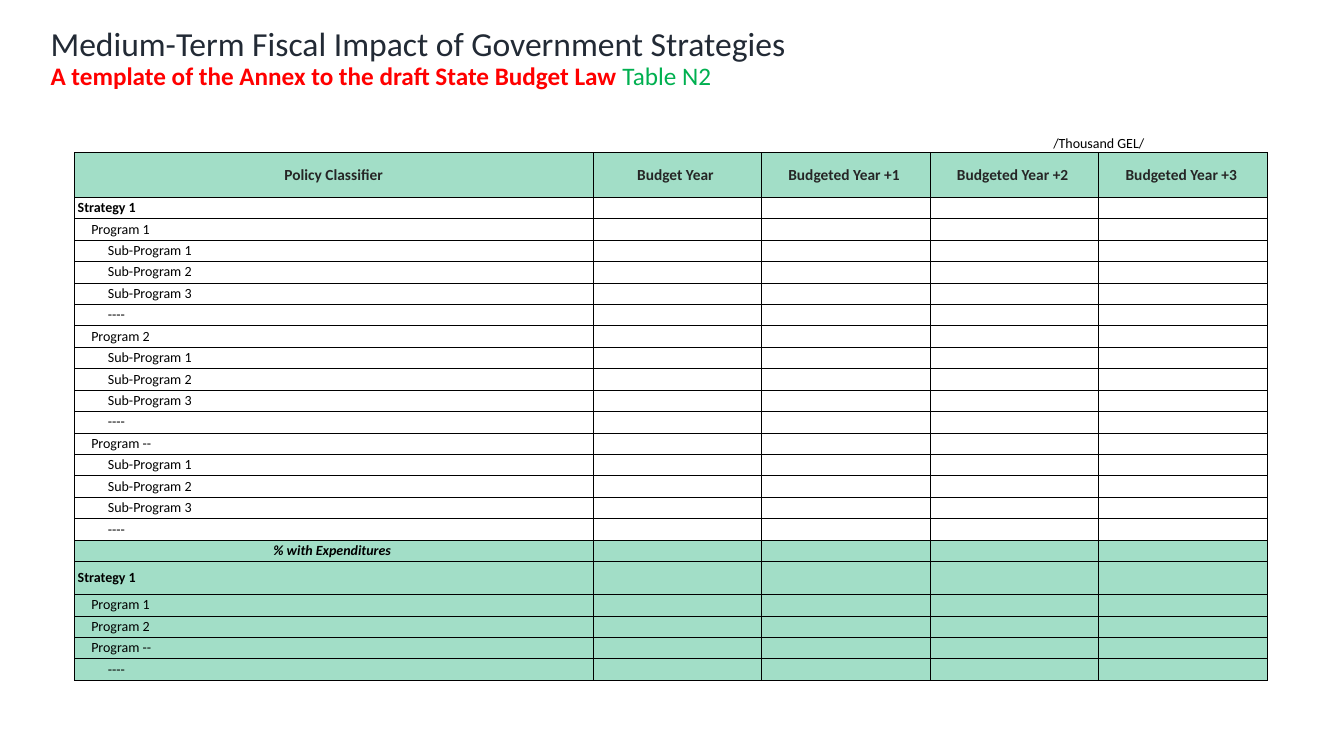
from dataclasses import dataclass

from lxml import etree
from pptx import Presentation
from pptx.dml.color import RGBColor
from pptx.enum import text
from pptx.oxml import ns
from pptx.util import Cm, Pt


@dataclass(frozen=True)
class Theme:
    font: str = "Calibri"
    title: str = "222A35"
    subtitle: str = "FF0000"
    table_number: str = "00B050"
    heading: str = "262626"
    body: str = "000000"
    border: str = "000000"
    band: str = "A2DEC7"
    title_size: float = 24
    subtitle_size: float = 18
    heading_size: float = 11
    body_size: float = 10
    border_width: float = 0.5


@dataclass(frozen=True)
class ClassifierRow:
    label: str
    indent: float = 0
    height: float = 0.54
    bold: bool = False
    italic: bool = False
    centred: bool = False
    shaded: bool = False


THEME = Theme()
PROGRAM_INDENT, SUB_PROGRAM_INDENT = 0.42, 0.84
UNIT_ROW_HEIGHT, HEADING_HEIGHT = 0.54, 1.13
COLUMN_WIDTHS = [13.06] + [4.25] * 4
HEADINGS = ["Policy Classifier", "Budget Year "] + [f"Budgeted Year +{year} " for year in (1, 2, 3)]
PROGRAMS = ["Program 1", "Program 2", "Program --"]
SUB_PROGRAMS = ["Sub-Program 1", "Sub-Program 2", "Sub-Program 3", "----"]


def classifier_rows() -> list[ClassifierRow]:
    rows = [ClassifierRow(" Strategy 1", bold=True)]
    for program in PROGRAMS:
        rows.append(ClassifierRow(program, PROGRAM_INDENT))
        rows += [ClassifierRow(name, SUB_PROGRAM_INDENT) for name in SUB_PROGRAMS]
    rows.append(ClassifierRow("% with Expenditures ", bold=True, italic=True, centred=True, shaded=True))
    rows.append(ClassifierRow(" Strategy 1", height=0.83, bold=True, shaded=True))
    rows += [ClassifierRow(program, PROGRAM_INDENT, shaded=True) for program in PROGRAMS]
    rows.append(ClassifierRow("----", SUB_PROGRAM_INDENT, shaded=True))
    return rows


def add_text(paragraph, words: str, *, size: float, colour: str, bold: bool = False, italic: bool = False) -> None:
    run = paragraph.add_run()
    run.text = words
    font = run.font
    font.name, font.size, font.bold, font.italic = THEME.font, Pt(size), bold, italic
    font.color.rgb = RGBColor.from_string(colour)


def set_borders(cell, sides: str) -> None:
    """Rule the named sides (letters from LRTB) and clear the others."""
    properties = cell._tc.get_or_add_tcPr()
    for position, side in enumerate("LRTB"):
        line = etree.Element(ns.qn(f"a:ln{side}"), w=str(Pt(THEME.border_width)))
        if side in sides:
            fill = etree.SubElement(line, ns.qn("a:solidFill"))
            etree.SubElement(fill, ns.qn("a:srgbClr"), val=THEME.border)
        else:
            etree.SubElement(line, ns.qn("a:noFill"))
        properties.insert(position, line)


def format_cell(cell, words: str = "", *, size: float = THEME.body_size, colour: str = THEME.body,
                bold: bool = False, italic: bool = False, centred: bool = False,
                indent: float = 0, shaded: bool = False, sides: str = "LRTB",
                anchor: text.MSO_ANCHOR = text.MSO_ANCHOR.MIDDLE) -> None:
    cell.margin_left = Cm(indent)
    cell.margin_right = cell.margin_top = cell.margin_bottom = 0
    cell.vertical_anchor = anchor
    if shaded:
        cell.fill.solid()
        cell.fill.fore_color.rgb = RGBColor.from_string(THEME.band)
    else:
        cell.fill.background()
    set_borders(cell, sides)
    paragraph = cell.text_frame.paragraphs[0]
    paragraph.alignment = text.PP_ALIGN.CENTER if centred else text.PP_ALIGN.LEFT
    if words:
        add_text(paragraph, words, size=size, colour=colour, bold=bold, italic=italic)
    else:
        etree.SubElement(paragraph._p, ns.qn("a:endParaRPr"), sz=str(int(size * 100)))


def format_title(title) -> None:
    title.left, title.top, title.width, title.height = Cm(1.02), Cm(0.56), Cm(30.94), Cm(1.85)
    frame = title.text_frame
    frame.auto_size = text.MSO_AUTO_SIZE.NONE
    frame.vertical_anchor = text.MSO_ANCHOR.MIDDLE
    paragraph = frame.paragraphs[0]
    paragraph.alignment = text.PP_ALIGN.LEFT
    paragraph.line_spacing = 0.9
    add_text(paragraph, "Medium-Term Fiscal Impact of Government Strategies",
             size=THEME.title_size, colour=THEME.title)
    paragraph.add_line_break()
    add_text(paragraph, "A template of the Annex to the draft State Budget Law ",
             size=THEME.subtitle_size, colour=THEME.subtitle, bold=True)
    add_text(paragraph, "Table N2", size=THEME.subtitle_size, colour=THEME.table_number)


def add_budget_table(slide) -> None:
    rows = classifier_rows()
    heights = [UNIT_ROW_HEIGHT, HEADING_HEIGHT] + [row.height for row in rows]
    table = slide.shapes.add_table(len(heights), len(COLUMN_WIDTHS), Cm(1.88), Cm(3.3),
                                   Cm(sum(COLUMN_WIDTHS)), Cm(sum(heights))).table
    table.first_row = table.horz_banding = False
    for column, width in zip(table.columns, COLUMN_WIDTHS):
        column.width = Cm(width)
    for table_row, height in zip(table.rows, heights):
        table_row.height = Cm(height)

    unit_column = 3
    table.cell(0, unit_column).merge(table.cell(0, unit_column + 1))
    for index, heading in enumerate(HEADINGS):
        format_cell(table.cell(0, index), "/Thousand GEL/" if index == unit_column else "",
                    centred=True, sides="B", anchor=text.MSO_ANCHOR.BOTTOM)
        format_cell(table.cell(1, index), heading, size=THEME.heading_size,
                    colour=THEME.heading, bold=True, centred=True, shaded=True)
    for number, row in enumerate(rows, start=2):
        format_cell(table.cell(number, 0), row.label, bold=row.bold, italic=row.italic,
                    centred=row.centred, indent=row.indent, shaded=row.shaded)
        for index in range(1, len(COLUMN_WIDTHS)):
            format_cell(table.cell(number, index), shaded=row.shaded)


def main() -> None:
    presentation = Presentation()
    presentation.slide_width, presentation.slide_height = Cm(33.87), Cm(19.05)
    slide = presentation.slides.add_slide(presentation.slide_layouts.get_by_name("Title Only"))
    format_title(slide.shapes.title)
    add_budget_table(slide)
    presentation.save("out.pptx")


if __name__ == "__main__":
    main()
